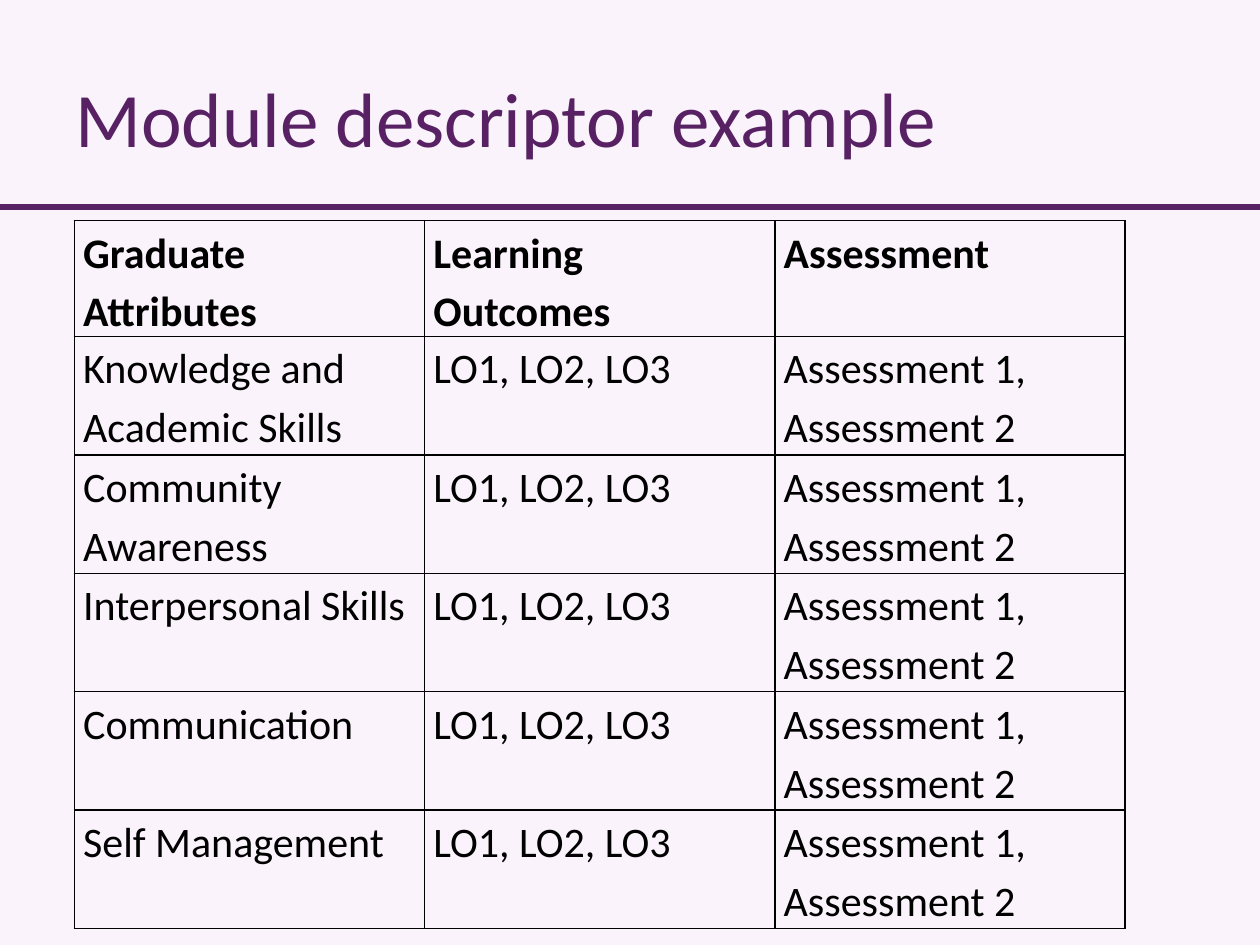
"""Build a slide that maps graduate attributes to outcomes and assessments."""
import dataclasses
import typing

import lxml.etree
import pptx
import pptx.dml.color
import pptx.enum.shapes
import pptx.enum.text
import pptx.oxml
import pptx.oxml.ns
import pptx.util

Inches = pptx.util.Inches
Pt = pptx.util.Pt


@dataclasses.dataclass(frozen=True)
class Theme:
    face: str = "Calibri"
    back: str = "FAF3FB"
    plum: str = "572163"
    ink: str = "000000"
    head: int = 44
    body: int = 24
    rule: float = 3.5
    edge: float = 1


@dataclasses.dataclass(frozen=True)
class Row:
    trait: str
    goals: str = "LO1, LO2, LO3"
    tests: str = "Assessment 1, Assessment 2"
    high: float = 0.94
    bold: bool = False


THEME = Theme()
ROWS = (
    Row("Graduate Attributes", "Learning Outcomes", "Assessment", 0.87, True),
    Row("Knowledge and Academic Skills"),
    Row("Community Awareness"),
    Row("Interpersonal Skills"),
    Row("Communication"),
    Row("Self Management"),
)


def tint(code: str) -> pptx.dml.color.RGBColor:
    return pptx.dml.color.RGBColor.from_string(code)


def apply(item: typing.Any, form: dict[str, typing.Any]) -> None:
    for name, value in form.items():
        setattr(item, name, value)


def write(para: typing.Any, text: str, size: int, hue: str, bold: bool = False) -> None:
    run = para.add_run()
    run.text = text
    apply(run.font, {"name": THEME.face, "size": Pt(size), "bold": bold})
    run.font.color.rgb = tint(hue)


def add_title(slide: typing.Any, text: str) -> None:
    box = slide.shapes.add_textbox(Inches(0.5), Inches(0.3), Inches(9), Inches(1.25))
    frame = box.text_frame
    apply(frame, {"word_wrap": True, "vertical_anchor": pptx.enum.text.MSO_ANCHOR.MIDDLE})
    write(frame.paragraphs[0], text, THEME.head, THEME.plum)


def add_rule(slide: typing.Any, top: float) -> None:
    kind = pptx.enum.shapes.MSO_CONNECTOR.STRAIGHT
    rule = slide.shapes.add_connector(kind, 0, Inches(top), Inches(10), Inches(top))
    rule.line.color.rgb = tint(THEME.plum)
    rule.line.width = Pt(THEME.rule)
    lxml.etree.SubElement(rule._element.spPr, pptx.oxml.ns.qn("a:effectLst"))


def add_edges(cell: typing.Any) -> None:
    props = cell._tc.get_or_add_tcPr()
    for spot, side in enumerate("LRTB"):
        props.insert(spot, pptx.oxml.parse_xml(
            f'<a:ln{side} {pptx.oxml.ns.nsdecls("a")} w="{Pt(THEME.edge)}"><a:solidFill>'
            f'<a:srgbClr val="{THEME.ink}"/></a:solidFill></a:ln{side}>'))


def fill_cell(cell: typing.Any, text: str, bold: bool) -> None:
    apply(cell, {"margin_left": Inches(0.07), "margin_right": Inches(0.07),
                 "margin_top": 0, "margin_bottom": 0})
    cell.fill.background()
    add_edges(cell)
    para = cell.text_frame.paragraphs[0]
    apply(para, {"line_spacing": 1.15, "space_after": Pt(10)})
    write(para, text, THEME.body, THEME.ink, bold)


def add_grid(slide: typing.Any, rows: tuple[Row, ...]) -> None:
    wide, count = 2.78, 3
    high = sum(row.high for row in rows)
    grid = slide.shapes.add_table(len(rows), count, Inches(0.59), Inches(1.75),
                                  Inches(wide * count), Inches(high)).table
    apply(grid, {"first_row": False, "horz_banding": False})
    for col in grid.columns:
        col.width = Inches(wide)
    for line, row in zip(grid.rows, rows):
        line.height = Inches(row.high)
        for cell, text in zip(line.cells, (row.trait, row.goals, row.tests)):
            fill_cell(cell, text, row.bold)


def main() -> None:
    deck = pptx.Presentation()
    apply(deck, {"slide_width": Inches(10), "slide_height": Inches(7.5)})
    slide = deck.slides.add_slide(deck.slide_layouts[6])
    slide.background.fill.solid()
    slide.background.fill.fore_color.rgb = tint(THEME.back)
    add_rule(slide, 1.64)
    add_title(slide, "Module descriptor example")
    add_grid(slide, ROWS)
    deck.save("out.pptx")


if __name__ == "__main__":
    main()
